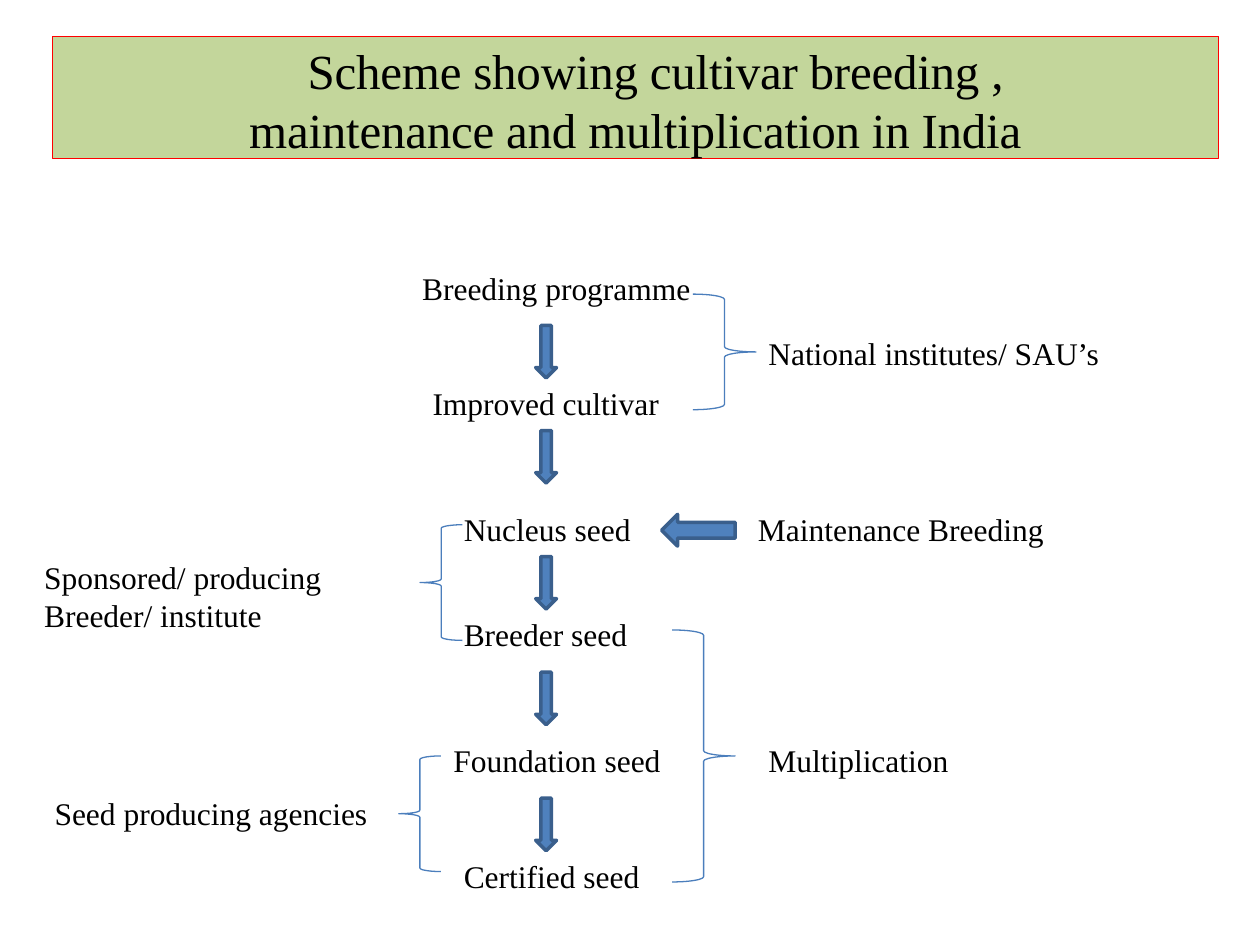
from pptx import Presentation
from pptx.dml.color import RGBColor as Color
from pptx.enum.shapes import MSO_SHAPE as Preset
from pptx.enum.text import MSO_ANCHOR as Anchor, PP_ALIGN as Align
from pptx.util import Cm, Pt

COLOURS = {
    "text": "000000",
    "title_fill": "C3D69B",
    "title_line": "FF0000",
    "arrow_fill": "4F81BD",
    "arrow_line": "3A5F8C",
    "brace": "4B7EBC",
}


class SchemeSlide:
    """Holds the shared style and the slide being filled."""

    font_format = {"name": "Times New Roman", "size": Pt(18)}

    def __init__(self, presentation):
        self.slide = presentation.slides.add_slide(presentation.slide_layouts[6])

    def style_font(self, font, **changes):
        for name, value in {**self.font_format, **changes}.items():
            setattr(font, name, value)
        font.color.rgb = Color.from_string(COLOURS["text"])

    def shape(self, preset, box, line, width, fill=None):
        shape = self.slide.shapes.add_shape(preset, *map(Cm, box))
        shape.shadow.inherit = False
        if fill:
            shape.fill.solid()
            shape.fill.fore_color.rgb = Color.from_string(COLOURS[fill])
        else:
            shape.fill.background()
        shape.line.color.rgb = Color.from_string(COLOURS[line])
        shape.line.width = Pt(width)
        return shape

    def title(self, text, box):
        shape = self.shape(Preset.RECTANGLE, box, "title_line", 0.72, "title_fill")
        frame_format = {
            "margin_left": 0, "margin_top": Cm(0.08), "margin_right": 0,
            "margin_bottom": 0, "vertical_anchor": Anchor.MIDDLE, "word_wrap": True,
        }
        for name, value in frame_format.items():
            setattr(shape.text_frame, name, value)
        paragraph = shape.text_frame.paragraphs[0]
        paragraph.alignment = Align.CENTER
        # Equal side margins, with the first line indented
        for name, length in {"marL": 2.46, "marR": 2.46, "indent": 0.81}.items():
            paragraph._p.get_or_add_pPr().set(name, str(Cm(length)))
        run = paragraph.add_run()
        run.text = text
        self.style_font(run.font, size=Pt(28))
        run._r.get_or_add_rPr().set("spc", "-10")

    def label(self, text, left, top, width, height=1.02):
        box = self.slide.shapes.add_textbox(*map(Cm, (left, top, width, height)))
        box.text_frame.word_wrap = True
        run = box.text_frame.paragraphs[0].add_run()
        run.text = text
        self.style_font(run.font)

    def arrow(self, preset, *box):
        self.shape(preset, box, "arrow_line", 2, "arrow_fill")

    def brace(self, preset, *box):
        self.shape(preset, box, "brace", 0.75)


def main():
    presentation = Presentation()
    presentation.slide_width, presentation.slide_height = Cm(25.4), Cm(19.05)
    scheme = SchemeSlide(presentation)

    scheme.title(
        "Scheme showing cultivar breeding , maintenance and multiplication in India",
        (1.06, 0.73, 23.5, 2.47),
    )

    # Stages down the middle, then the notes on either side
    labels = [
        ("Breeding programme", 8.26, 5.29, 6.35),
        ("Improved cultivar", 8.47, 7.62, 5.08),
        ("Nucleus seed", 9.1, 10.16, 4.02),
        ("Breeder seed", 9.1, 12.28, 4.23),
        ("Foundation seed", 8.89, 14.82, 5.08),
        ("Certified seed", 9.1, 17.15, 4.45),
        ("National institutes/ SAU’s", 15.24, 6.6, 8.47),
        ("Maintenance Breeding", 15.03, 10.16, 6.56),
        ("Sponsored/ producing Breeder/ institute", 0.64, 11.12, 8.25, 1.8),
        ("Multiplication", 15.24, 14.82, 4.23),
        ("Seed producing agencies", 0.85, 15.88, 6.99),
    ]
    for label in labels:
        scheme.label(*label)

    # Arrows between stages, and from maintenance breeding
    for top in (6.56, 8.68, 11.22, 13.55, 16.09):
        scheme.arrow(Preset.DOWN_ARROW, 10.8, top, 0.42, 1.06)
    scheme.arrow(Preset.LEFT_ARROW, 13.34, 10.37, 1.48, 0.64)

    # Braces joining stages to their notes
    scheme.brace(Preset.LEFT_BRACE, 8.47, 10.58, 0.85, 2.33)
    scheme.brace(Preset.LEFT_BRACE, 8.04, 15.24, 0.85, 2.33)
    scheme.brace(Preset.RIGHT_BRACE, 13.55, 12.7, 1.27, 5.08)
    scheme.brace(Preset.RIGHT_BRACE, 13.97, 5.93, 1.27, 2.33)

    presentation.save("out.pptx")


if __name__ == "__main__":
    main()
